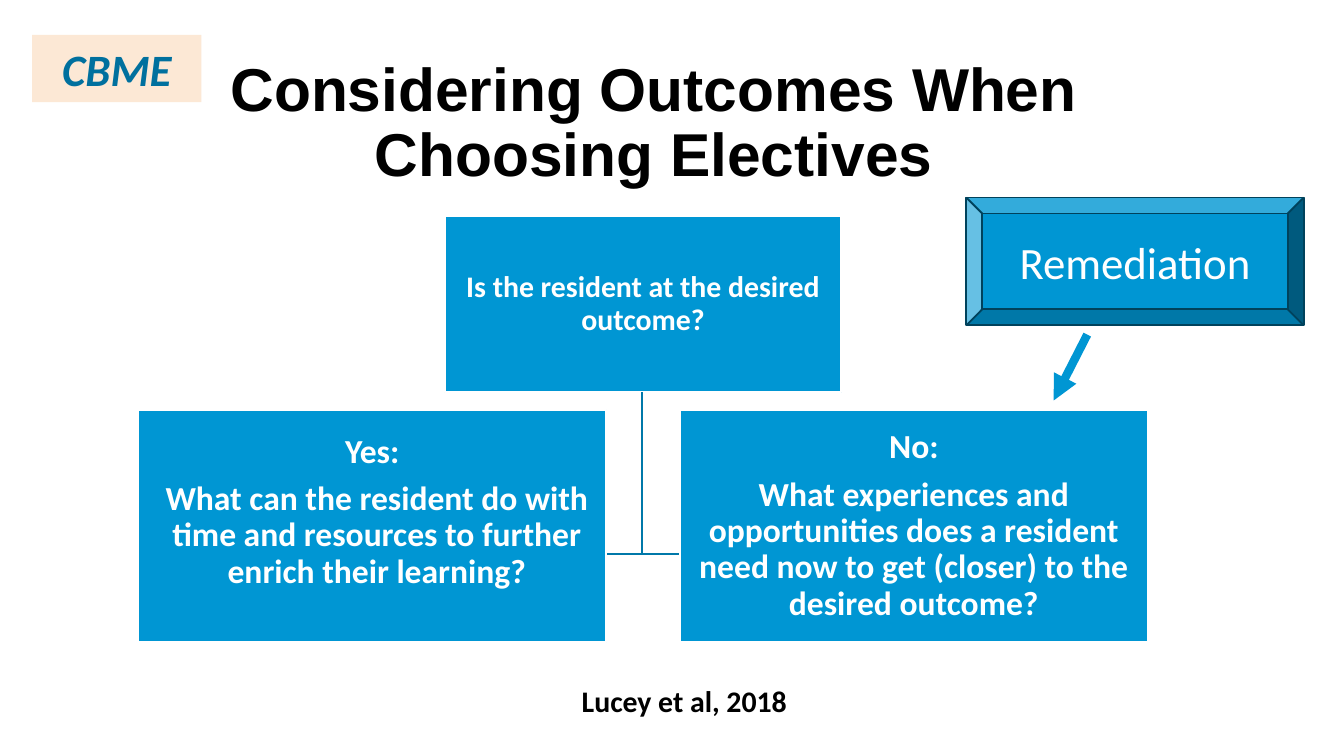
import pptx
import pptx.util
import pptx.dml.color
import pptx.enum.shapes
import pptx.enum.text
import pptx.oxml.ns
import lxml.etree

Inches, Pt = pptx.util.Inches, pptx.util.Pt
SHAPE = pptx.enum.shapes.MSO_SHAPE
ANCHOR = pptx.enum.text.MSO_ANCHOR
ALIGN = pptx.enum.text.PP_ALIGN

TITLE = "Considering Outcomes When Choosing Electives"
QUESTION = ["Is the resident at the desired outcome?"]
ANSWERS = [
    {"left": 1.03, "joint": 4.51, "anchor": ANCHOR.TOP, "top_inset": 0.18, "indent": 0.07,
     "lines": ["Yes:", "What can the resident do with time and resources "
               "to further enrich their learning?"]},
    {"left": 5.06, "joint": 5.06, "anchor": ANCHOR.MIDDLE, "top_inset": 0.01, "indent": 0,
     "lines": ["No:", "What experiences and opportunities does a resident need now "
               "to get (closer) to the desired outcome?"]},
]
TAG, CALLOUT, CITATION = "CBME", "Remediation", "Lucey et al, 2018"

SLIDE_WIDTH = 10
SLIDE_HEIGHT = SLIDE_WIDTH * 9 / 16
QUESTION_BOX = (3.31, 1.61, 2.95, 1.31)
ANSWER_TOP, ANSWER_WIDTH, ANSWER_HEIGHT = 3.05, 3.48, 1.73
TRUNK_X, TRUNK_TOP, TRUNK_BOTTOM = 4.78, 2.92, 4.12

THEME = {
    "blue": "0096D3", "branch": "0078A9", "bevel_line": "00425C", "white": "FFFFFF",
    "black": "000000", "peach": "FCE8D5", "tag_text": "00709E",
    "title": {"name": "Arial", "size": Pt(32.4), "bold": True},
    "question": {"name": "Calibri", "size": Pt(16), "bold": True},
    "answer": {"name": "Calibri", "size": Pt(18), "bold": True},
    "tag": {"name": "Calibri", "size": Pt(24), "bold": True, "italic": True},
    "callout": {"name": "Calibri", "size": Pt(24)},
}


def color(name):
    return pptx.dml.color.RGBColor.from_string(THEME[name])


def set_all(target, values):
    for name, value in values.items():
        setattr(target, name, value)


def write(shape, lines, style, text_color, frame=None, paragraph_format=None):
    text_frame = shape.text_frame
    set_all(text_frame, {"word_wrap": True, "vertical_anchor": ANCHOR.MIDDLE, **(frame or {})})
    text_frame.text = "\n".join(lines)
    for paragraph in text_frame.paragraphs:
        set_all(paragraph, {"alignment": ALIGN.CENTER, **(paragraph_format or {})})
        for run in paragraph.runs:
            set_all(run.font, THEME[style])
            run.font.color.rgb = color(text_color)


def add_box(slide, kind, box, fill, line=None):
    shape = slide.shapes.add_shape(kind, *map(Inches, box))
    shape.shadow.inherit = False
    shape.fill.solid()
    shape.fill.fore_color.rgb = color(fill)
    if line:
        shape.line.color.rgb = color(line)
        shape.line.width = Pt(1)
    else:
        shape.line.fill.background()
    return shape


def add_node(slide, box, lines, style, anchor=ANCHOR.MIDDLE, top_inset=0.01):
    node = add_box(slide, SHAPE.RECTANGLE, box, "blue", "white")
    inset = Inches(0.01)
    write(node, lines, style, "white",
          {"vertical_anchor": anchor, "margin_left": inset, "margin_right": inset,
           "margin_top": Inches(top_inset), "margin_bottom": inset},
          {"line_spacing": 0.9, "space_after": Pt(6)})
    return node


def add_branch(slide, joint):
    """Draw the elbow from the question down the trunk to an answer."""
    builder = slide.shapes.build_freeform(Inches(TRUNK_X), Inches(TRUNK_TOP))
    builder.add_line_segments(
        [(Inches(TRUNK_X), Inches(TRUNK_BOTTOM)), (Inches(joint), Inches(TRUNK_BOTTOM))],
        close=False)
    branch = builder.convert_to_shape()
    branch.shadow.inherit = False
    branch.fill.background()
    branch.line.color.rgb = color("branch")
    branch.line.width = Pt(1)


def add_arrow(slide, start, end):
    arrow = slide.shapes.add_connector(
        pptx.enum.shapes.MSO_CONNECTOR.STRAIGHT, *map(Inches, start + end))
    arrow.line.color.rgb = color("blue")
    arrow.line.width = Pt(4.5)
    qn = pptx.oxml.ns.qn
    line = arrow._element.spPr.find(qn("a:ln"))
    lxml.etree.SubElement(line, qn("a:tailEnd"), type="triangle")
    lxml.etree.SubElement(arrow._element.spPr, qn("a:effectLst"))


def main():
    presentation = pptx.Presentation()
    presentation.slide_width = Inches(SLIDE_WIDTH)
    presentation.slide_height = Inches(SLIDE_HEIGHT)
    slide = presentation.slides.add_slide(presentation.slide_layouts[5])

    title = slide.shapes.title
    set_all(title, {"left": Inches(0.87), "top": Inches(0.38),
                    "width": Inches(7.99), "height": Inches(1.09)})
    write(title, [TITLE], "title", "black",
          {"auto_size": pptx.enum.text.MSO_AUTO_SIZE.NONE}, {"line_spacing": 0.9})

    add_node(slide, QUESTION_BOX, QUESTION, "question")
    for answer in ANSWERS:
        add_branch(slide, answer["joint"])
        node = add_node(slide, (answer["left"], ANSWER_TOP, ANSWER_WIDTH, ANSWER_HEIGHT),
                        answer["lines"], "answer", answer["anchor"], answer["top_inset"])
        body = node.text_frame.paragraphs[-1]
        body._p.get_or_add_pPr().set("marL", str(Inches(answer["indent"])))

    citation = slide.shapes.add_textbox(*map(Inches, (4.23, 5.03, 1.75, 0.37)))
    write(citation, [CITATION], "question", "black",
          {"word_wrap": False, "vertical_anchor": ANCHOR.TOP}, {"alignment": ALIGN.LEFT})

    tag = add_box(slide, SHAPE.RECTANGLE, (0.24, 0.26, 1.26, 0.5), "peach")
    write(tag, [TAG], "tag", "tag_text", {"vertical_anchor": ANCHOR.TOP})

    callout = add_box(slide, SHAPE.BEVEL, (7.19, 1.47, 2.51, 0.95), "blue", "bevel_line")
    write(callout, [CALLOUT], "callout", "white")
    add_arrow(slide, (8.09, 2.49), (7.84, 2.98))

    presentation.save("out.pptx")


if __name__ == "__main__":
    main()
